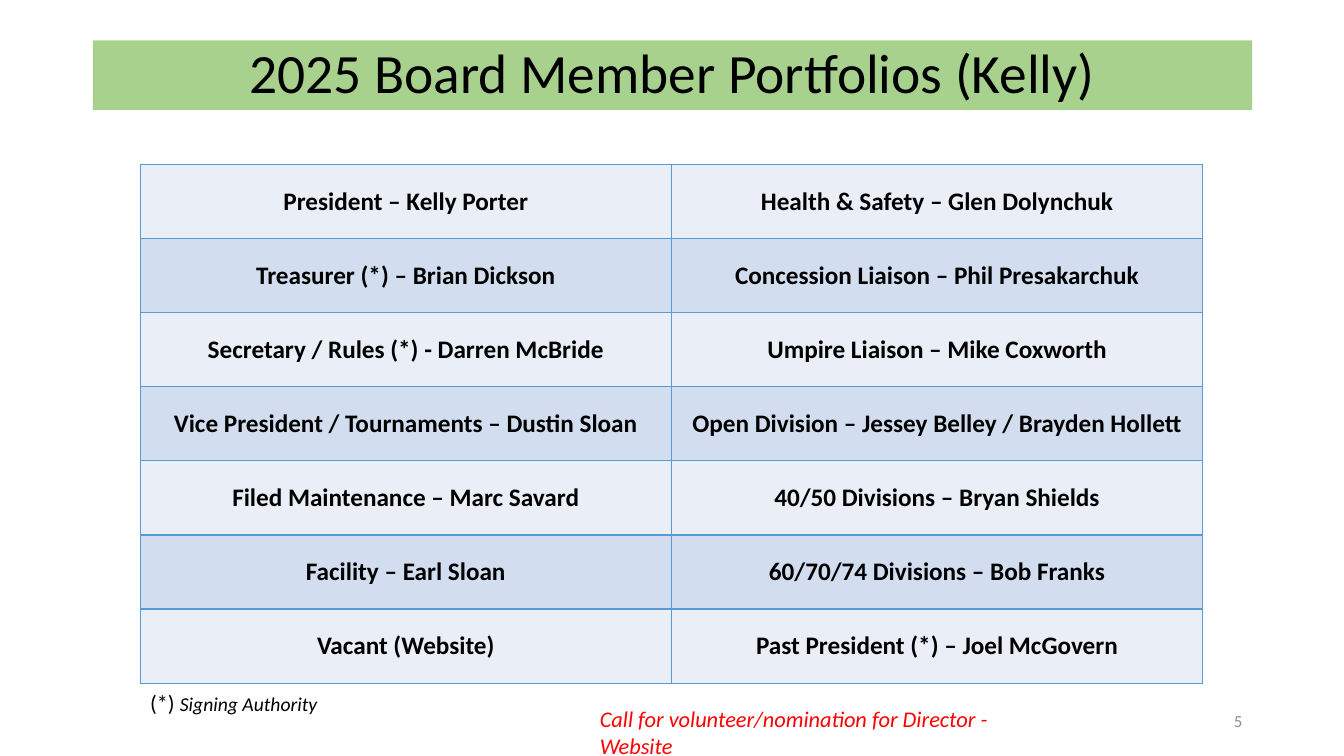
import pptx
import pptx.dml.color
import pptx.enum.text
import pptx.oxml
import pptx.oxml.ns
import pptx.util
from pptx.util import Inches

TITLE = "2025 Board Member Portfolios (Kelly)"
PORTFOLIOS = [
    ("President – Kelly Porter", "Health & Safety – Glen Dolynchuk"),
    ("Treasurer (*) – Brian Dickson", "Concession Liaison – Phil Presakarchuk"),
    ("Secretary / Rules (*) - Darren McBride", "Umpire Liaison – Mike Coxworth"),
    ("Vice President / Tournaments – Dustin Sloan", "Open Division – Jessey Belley / Brayden Hollett"),
    ("Filed Maintenance – Marc Savard", "40/50 Divisions – Bryan Shields"),
    ("Facility – Earl Sloan", "60/70/74 Divisions – Bob Franks"),
    ("Vacant (Website)", "Past President (*) – Joel McGovern"),
]
SIGNING_MARK, SIGNING_NOTE = "(*) ", "Signing Authority"
VOLUNTEER_CALL = "Call for volunteer/nomination for Director - Website"
PAGE_NUMBER = "5"
COLORS = {
    "title_fill": "A9D18E",
    "text": "000000",
    "call": "FF0000",
    "page_number": "8C8C8C",
    "border": "5B9BD5",
    "odd_row": "EAEFF7",
    "even_row": "D2DEEF",
}
FONT = "Calibri"
ALIGN = pptx.enum.text.PP_ALIGN
ANCHOR = pptx.enum.text.MSO_ANCHOR


def color(name):
    return pptx.dml.color.RGBColor.from_string(COLORS[name])


def style(span, size, color_name="text", bold=False, italic=False):
    span.font.name = FONT
    span.font.size = pptx.util.Pt(size)
    span.font.bold = bold
    span.font.italic = italic
    span.font.color.rgb = color(color_name)


def add_text(page, place, spans, align=ALIGN.LEFT, anchor=ANCHOR.TOP):
    box = page.shapes.add_textbox(*map(Inches, place))
    box.text_frame.word_wrap = True
    box.text_frame.vertical_anchor = anchor
    para = box.text_frame.paragraphs[0]
    para.alignment = align
    for text, size, color_name, italic in spans:
        span = para.add_run()
        span.text = text
        style(span, size, color_name, italic=italic)


def add_borders(cell):
    properties = cell._tc.get_or_add_tcPr()
    for position, side in enumerate(("lnL", "lnR", "lnT", "lnB")):
        line = pptx.oxml.parse_xml(
            f'<a:{side} {pptx.oxml.ns.nsdecls("a")} w="12700"><a:solidFill>'
            f'<a:srgbClr val="{COLORS["border"]}"/></a:solidFill></a:{side}>'
        )
        properties.insert(position, line)


def add_title(page):
    title = page.shapes.title
    title.left, title.top, title.width, title.height = map(Inches, (0.92, 0.4, 11.5, 0.69))
    title.fill.solid()
    title.fill.fore_color.rgb = color("title_fill")
    frame = title.text_frame
    frame.text = TITLE
    frame.auto_size = pptx.enum.text.MSO_AUTO_SIZE.NONE
    frame.vertical_anchor = ANCHOR.MIDDLE
    para = frame.paragraphs[0]
    para.alignment = ALIGN.CENTER
    para.line_spacing = 0.9
    style(para.runs[0], 39.6)


def add_portfolios(page):
    table = page.shapes.add_table(
        len(PORTFOLIOS), 2, Inches(1.39), Inches(1.63), Inches(10.54), Inches(5.15)
    ).table
    for row_index, row in enumerate(PORTFOLIOS):
        for column_index, text in enumerate(row):
            cell = table.cell(row_index, column_index)
            cell.text = text
            cell.vertical_anchor = ANCHOR.MIDDLE
            cell.fill.solid()
            cell.fill.fore_color.rgb = color("even_row" if row_index % 2 else "odd_row")
            add_borders(cell)
            para = cell.text_frame.paragraphs[0]
            para.alignment = ALIGN.CENTER
            style(para.runs[0], 18, bold=True)


def main():
    deck = pptx.Presentation()
    deck.slide_width, deck.slide_height = Inches(13.33), Inches(7.5)
    page = deck.slides.add_slide(deck.slide_layouts[5])
    add_title(page)
    add_text(page, (9.42, 6.95, 3, 0.4), [(PAGE_NUMBER, 12, "page_number", False)],
             ALIGN.RIGHT, ANCHOR.MIDDLE)
    add_portfolios(page)
    add_text(page, (1.39, 6.79, 3.46, 0.37),
             [(SIGNING_MARK, 16, "text", False), (SIGNING_NOTE, 14, "text", True)])
    add_text(page, (5.85, 6.95, 4.58, 0.64), [(VOLUNTEER_CALL, 16, "call", True)])
    deck.save("out.pptx")


if __name__ == "__main__":
    main()
